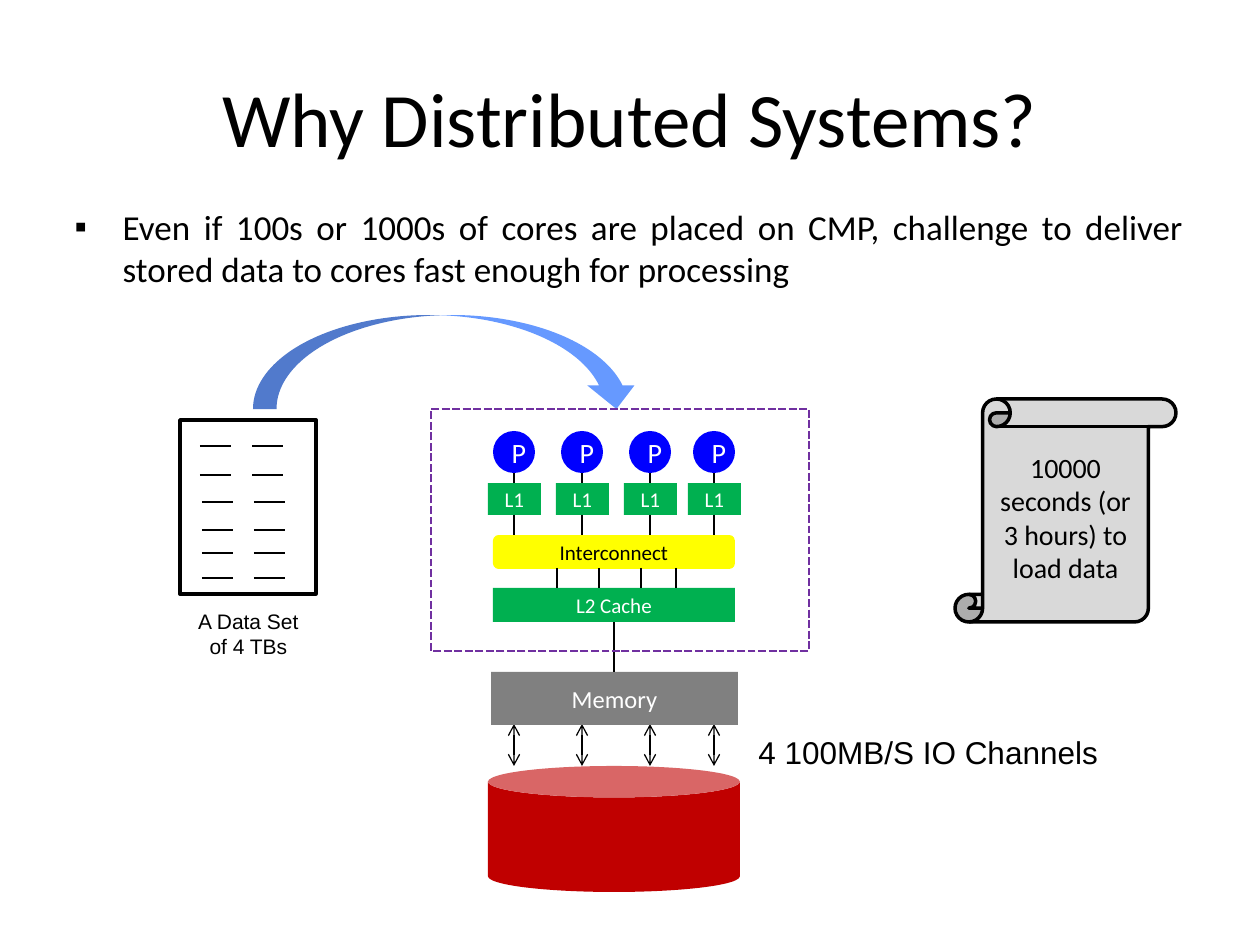
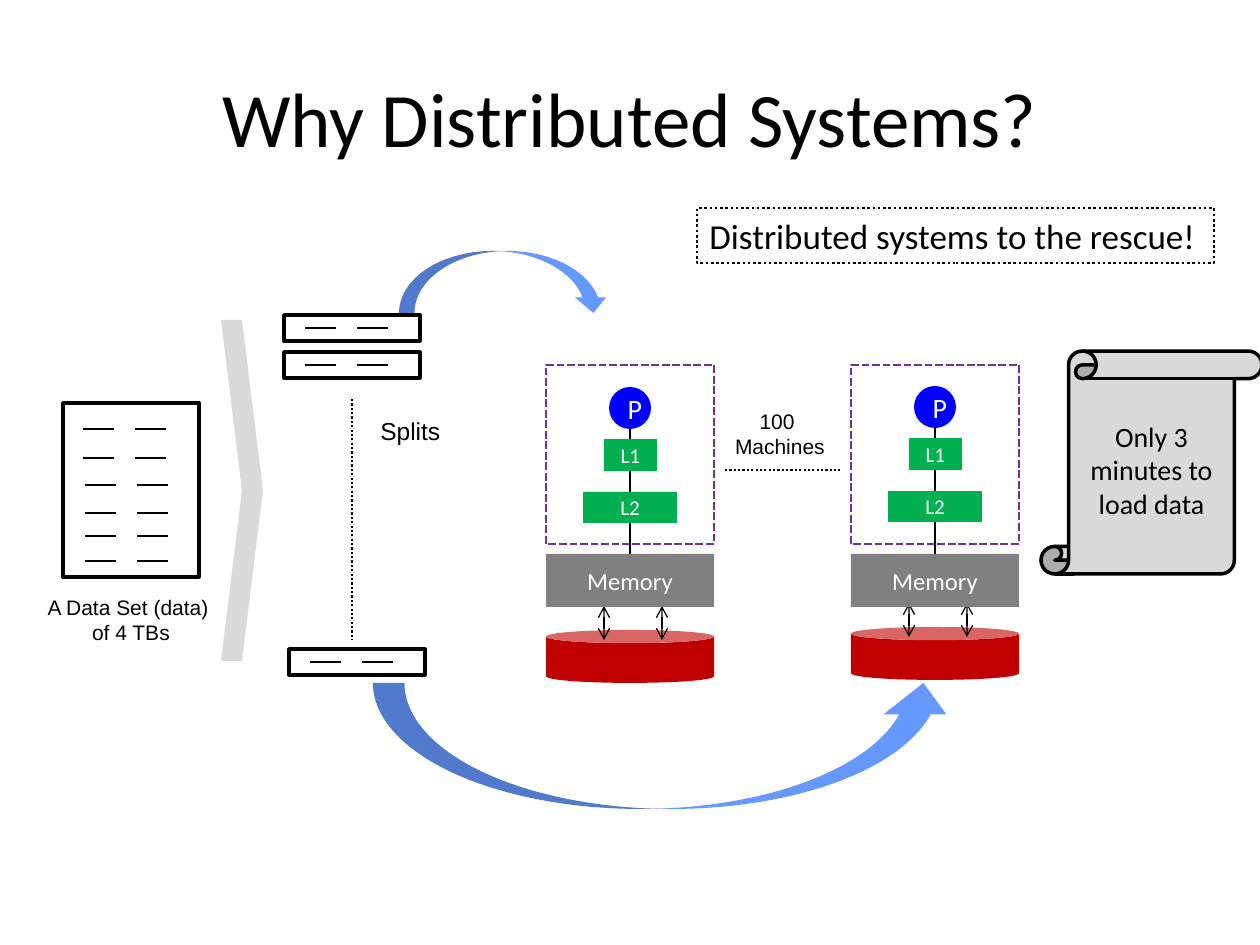
from lxml.etree import SubElement
from pptx import Presentation
from pptx.dml.color import RGBColor
from pptx.enum.dml import MSO_LINE
from pptx.enum.shapes import MSO_CONNECTOR, MSO_SHAPE
from pptx.enum.text import MSO_ANCHOR, MSO_AUTO_SIZE, PP_ALIGN
from pptx.oxml.ns import qn
from pptx.util import Emu, Pt

PX = 914400 / 126
BLACK, WHITE = "000000", "FFFFFF"
PURPLE, ARROW_BLUE, CORE_BLUE = "7030A0", "6699FF", "0000FF"
GREEN, YELLOW, RED = "00B050", "FFFF00", "C00000"
GREY, PALE_GREY = "808080", "D9D9D9"
TITLE = "Why Distributed Systems?"
SHEET_WIDTH, MARK_WIDTH, MARK_PITCH = 136, 31, 52
PAGE_MARKS = [(20, 26), (20, 55), (22, 82), (22, 110), (22, 133), (22, 158)]
SPLIT_MARKS = [(21, 13)]


def px(*lengths):
    return [Emu(round(length * PX)) for length in lengths]


def colour(hex_value):
    return RGBColor.from_string(hex_value)


def set_values(target, values):
    for name, value in values.items():
        setattr(target, name, value)


def write(frame, text, size, hex_value=BLACK, font="Calibri", align=PP_ALIGN.CENTER):
    frame.text = text
    for paragraph in frame.paragraphs:
        paragraph.alignment = align
        for run in paragraph.runs:
            set_values(run.font, {"name": font, "size": Pt(size)})
            run.font.color.rgb = colour(hex_value)


def draw_line(line, hex_value, width, dash=None):
    line.color.rgb = colour(hex_value)
    set_values(line, {"width": Pt(width), "dash_style": dash})


def add_block(slide, kind, box, fill=None, outline=None, text="", size=12, ink=WHITE):
    block = slide.shapes.add_shape(kind, *px(*box))
    block.shadow.inherit = False
    if fill:
        block.fill.solid()
        block.fill.fore_color.rgb = colour(fill)
    else:
        block.fill.background()
    if outline:
        draw_line(block.line, *outline)
    else:
        block.line.fill.background()
    if text:
        write(block.text_frame, text, size, ink)
    return block


def add_link(slide, start, end, width=0.75, dash=None, two_way=False):
    link = slide.shapes.add_connector(MSO_CONNECTOR.STRAIGHT, *px(*start, *end))
    draw_line(link.line, BLACK, width, dash)
    properties = link.element.spPr
    if two_way:
        for tip in ("a:headEnd", "a:tailEnd"):
            SubElement(properties.find(qn("a:ln")), qn(tip), type="arrow")
    SubElement(properties, qn("a:effectLst"))


def add_label(slide, box, text, size, align=PP_ALIGN.CENTER):
    frame = slide.shapes.add_textbox(*px(*box)).text_frame
    frame.word_wrap = False
    write(frame, text, size, font="Arial", align=align)


def add_titled_slide(deck, layout):
    slide = deck.slides.add_slide(deck.slide_layouts[layout])
    title = slide.shapes.title
    set_values(title, dict(zip(("left", "top", "width", "height"), px(63, 38, 1134, 157))))
    title.text_frame.vertical_anchor = MSO_ANCHOR.MIDDLE
    write(title.text_frame, TITLE, 44)
    return slide


def add_bullet(slide, text):
    body = slide.placeholders[1]
    set_values(body, dict(zip(("left", "top", "width", "height"), px(62, 199, 1134, 189))))
    body.text_frame.auto_size = MSO_AUTO_SIZE.NONE
    write(body.text_frame, text, 20, align=PP_ALIGN.JUSTIFY)
    properties = body.text_frame.paragraphs[0]._p.get_or_add_pPr()
    indent = px(48)[0]
    properties.set("marL", str(indent))
    properties.set("indent", str(-indent))
    SubElement(properties, qn("a:buChar"), char="▪")


def add_sheet(slide, left, top, height, marks):
    add_block(slide, MSO_SHAPE.RECTANGLE, (left, top, SHEET_WIDTH, height), outline=(BLACK, 2))
    for indent, drop in marks:
        for column in range(2):
            x = left + indent + column * MARK_PITCH
            add_link(slide, (x, top + drop), (x + MARK_WIDTH, top + drop))


def add_scroll(slide, left, top, text):
    add_block(slide, MSO_SHAPE.VERTICAL_SCROLL, (left, top, 221, 223), PALE_GREY,
              (BLACK, 2), text, 16, BLACK)


def add_core(slide, centre, top):
    add_block(slide, MSO_SHAPE.OVAL, (centre - 21, top, 42, 42), CORE_BLUE, text="P", size=16)
    add_link(slide, (centre, top + 42), (centre, top + 52))
    add_block(slide, MSO_SHAPE.RECTANGLE, (centre - 26, top + 52, 53, 32), GREEN, text="L1")
    add_link(slide, (centre, top + 84), (centre, top + 105))


def add_memory(slide, box):
    add_block(slide, MSO_SHAPE.RECTANGLE, box, GREY, text="Memory", size=14)


def add_chip_frame(slide, box):
    add_block(slide, MSO_SHAPE.RECTANGLE, box, outline=(PURPLE, 1.5, MSO_LINE.SQUARE_DOT))


def add_storage(slide, box, channels, channel_top, channel_bottom):
    add_block(slide, MSO_SHAPE.CAN, box, RED)
    for x in channels:
        add_link(slide, (x, channel_top), (x, channel_bottom), two_way=True)


def add_machine(slide, centre, core_top, storage_top):
    left, width = centre - 84, 168
    add_storage(slide, (left, storage_top, width, 53), (centre - 26, centre + 32),
                storage_top - 24, storage_top + 10)
    add_memory(slide, (left, 554, width, 53))
    add_chip_frame(slide, (left, 365, width, 179))
    add_core(slide, centre, core_top)
    add_block(slide, MSO_SHAPE.RECTANGLE, (centre - 47, core_top + 105, 94, 31), GREEN, text="L2")
    add_link(slide, (centre, core_top + 136), (centre, 554))


def build_single_machine(deck):
    slide = add_titled_slide(deck, 1)
    add_bullet(slide, "Even if 100s or 1000s of cores are placed on CMP, challenge to "
                      "deliver stored data to cores fast enough for processing")
    core_centres = (514, 582, 650, 714)
    add_storage(slide, (488, 766, 252, 126), core_centres, 724, 766)
    add_sheet(slide, 180, 420, 174, PAGE_MARKS)
    add_label(slide, (185, 602, 127, 64), "A Data Set\nof 4 TBs", 12)
    add_block(slide, MSO_SHAPE.CURVED_DOWN_ARROW, (253, 315, 387, 94), ARROW_BLUE)
    add_label(slide, (746, 727, 368, 50), "4 100MB/S IO Channels", 18, PP_ALIGN.LEFT)
    add_scroll(slide, 955, 399, "10000 seconds (or 3 hours) to load data")
    add_memory(slide, (491, 672, 247, 53))
    add_link(slide, (614, 621), (614, 672))
    add_chip_frame(slide, (431, 409, 378, 242))
    for centre in core_centres:
        add_core(slide, centre, 431)
    add_block(slide, MSO_SHAPE.RECTANGLE, (493, 588, 242, 34), GREEN, text="L2 Cache")
    add_block(slide, MSO_SHAPE.ROUNDED_RECTANGLE, (493, 535, 242, 34), YELLOW,
              text="Interconnect", ink=BLACK)
    for x in (557, 599, 641, 676):
        add_link(slide, (x, 568), (x, 588))


def build_cluster(deck):
    slide = add_titled_slide(deck, 5)
    add_sheet(slide, 63, 403, 174, PAGE_MARKS)
    add_scroll(slide, 1041, 351, "Only 3 minutes to load data")
    add_block(slide, MSO_SHAPE.CHEVRON, (221, 320, 42, 341), PALE_GREY)
    for left, top in ((284, 315), (284, 352), (289, 649)):
        add_sheet(slide, left, top, 26, SPLIT_MARKS)
    add_link(slide, (352, 399), (352, 640), 1.25, MSO_LINE.ROUND_DOT)
    add_link(slide, (725, 470), (840, 470), 1.25, MSO_LINE.ROUND_DOT)
    add_block(slide, MSO_SHAPE.CURVED_DOWN_ARROW, (399, 251, 210, 62), ARROW_BLUE)
    add_block(slide, MSO_SHAPE.CURVED_UP_ARROW, (373, 683, 582, 126), ARROW_BLUE)
    add_label(slide, (34, 588, 194, 64), "A Data Set (data) \nof 4 TBs", 12)
    add_label(slide, (368, 410, 86, 43), "Splits", 14, PP_ALIGN.LEFT)
    add_machine(slide, 630, 387, 630)
    add_machine(slide, 935, 386, 627)
    add_label(slide, (722, 402, 116, 64), "100 \nMachines", 12)
    rescue = add_block(slide, MSO_SHAPE.RECTANGLE, (697, 208, 517, 55),
                       outline=(BLACK, 1.5, MSO_LINE.ROUND_DOT))
    rescue.text_frame.word_wrap = False
    write(rescue.text_frame, "Distributed systems to the rescue!", 20, align=PP_ALIGN.LEFT)


def main():
    deck = Presentation()
    set_values(deck, dict(zip(("slide_width", "slide_height"), px(1260, 945))))
    build_single_machine(deck)
    build_cluster(deck)
    deck.save("out.pptx")


if __name__ == "__main__":
    main()
